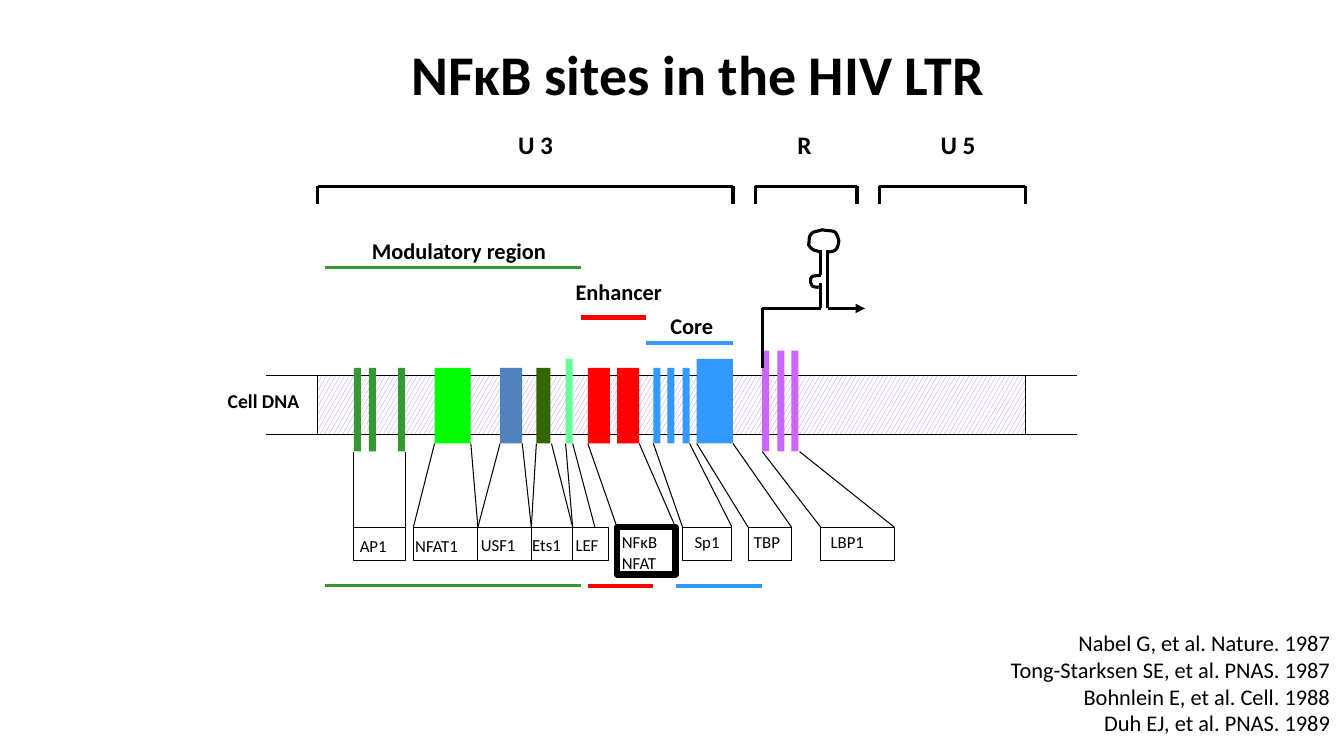
from pptx import Presentation
from pptx.dml.color import RGBColor
from pptx.enum.dml import MSO_PATTERN
from pptx.enum.shapes import MSO_CONNECTOR as Conn, MSO_SHAPE as Shape
from pptx.enum.text import MSO_ANCHOR as Anchor, MSO_AUTO_SIZE as Auto, PP_ALIGN as Align
from pptx.oxml.ns import qn
from pptx.util import Pt
from lxml.etree import SubElement

PX = 9144
BLACK = RGBColor(0, 0, 0)
WHITE = RGBColor(255, 255, 255)
RED = RGBColor(255, 0, 0)
BLUE = RGBColor(0x33, 0x99, 0xFF)
GREEN = RGBColor(0x33, 0x99, 0x33)
LIME = RGBColor(0, 255, 0)
STEEL = RGBColor(0x4F, 0x81, 0xBD)
OLIVE = RGBColor(0x33, 0x66, 0)
MINT = RGBColor(0x66, 0xFF, 0x99)
VIOLET = RGBColor(0xCC, 0x66, 0xFF)
HATCH = RGBColor(0x99, 0x66, 0xFF)

TITLE = "NFκB sites in the HIV LTR"
PAPERS = [
    "Nabel G, et al. Nature. 1987",
    "Tong-Starksen SE, et al. PNAS. 1987",
    "Bohnlein E, et al. Cell. 1988",
    "Duh EJ, et al. PNAS. 1989",
]
# text, left, top, width, height, size
HEADS = [
    ("U 3", 504, 123, 55, 40, 18),
    ("R", 781, 123, 34, 40, 18),
    ("U 5", 923, 123, 55, 40, 18),
    ("Modulatory region", 359, 230, 195, 37, 16),
    ("Enhancer", 561, 271, 107, 37, 16),
    ("Core", 655, 305, 63, 37, 16),
    ("Cell DNA", 216, 381, 92, 34, 14),
]
DNA = (315, 373, 702, 58)
SPANS = [(315, 727), (749, 850), (872, 1017)]
BARS = [
    (VIOLET, 7, 348, 448, [756, 771, 785]),
    (BLUE, 36, 356, 440, [691]),
    (BLUE, 7, 365, 440, [648, 662, 677]),
    (RED, 22, 365, 440, [583, 612]),
    (GREEN, 7, 365, 448, [351, 366, 395]),
    (LIME, 36, 365, 440, [431]),
    (STEEL, 22, 365, 440, [496]),
    (OLIVE, 14, 365, 440, [532]),
    (MINT, 7, 356, 440, [561]),
]
RULES = [
    (322, 576, 265, GREEN, 2.25),
    (576, 641, 315, RED, 3),
    (641, 727, 340, BLUE, 3),
    (322, 576, 581, GREEN, 2.25),
    (583, 648, 581, RED, 3),
    (670, 756, 581, BLUE, 3),
]
STEMS = [
    (756, 365, 756, 306),
    (756, 306, 814, 306),
    (814, 306, 814, 281),
    (821, 306, 821, 248),
    (814, 273, 814, 248),
]
BULGE = [(814, 273), (811, 274), (803, 272), (804, 279), (804, 281),
         (805, 283), (806, 284), (808, 285), (812, 285), (812, 285)]
LOOP = [(814, 250), (808, 248), (806, 249), (802, 243), (803, 239),
        (802, 235), (804, 233), (806, 229), (811, 230), (815, 228),
        (828, 230), (829, 227), (832, 239), (831, 247), (829, 250), (821, 250)]
SITES = [
    ("AP1", 347, 527, 47, 351, 402),
    ("NFAT1", 402, 527, 93, 410, 474),
    ("USF1", 467, 526, 55, 474, 527),
    ("Ets1", 518, 526, 49, 527, 568),
    ("LEF", 561, 526, 43, 568, 604),
    ("NFκB\nNFAT", 607, 523, 64, 612, 670),
    ("Sp1", 679, 523, 45, 677, 726),
    ("TBP", 738, 523, 46, 742, 785),
    ("LBP1", 814, 523, 54, 814, 887),
]
LEGS = [
    (448, [(351, 351), (402, 402), (756, 814), (793, 887)]),
    (440, [(431, 410), (467, 474), (496, 474), (518, 527), (532, 527),
           (547, 568), (561, 568), (568, 590), (583, 612), (634, 670),
           (648, 677), (684, 726), (691, 742), (727, 785)]),
]
BOXTOP = 523


def emu(*nums):
    """Turn px into EMU."""
    return [n * PX for n in nums]


def line(host, x1, y1, x2, y2, color=BLACK, width=0.75, arrow=False):
    """Draw a straight line."""
    rule = host.add_connector(Conn.STRAIGHT, *emu(x1, y1, x2, y2))
    rule.line.color.rgb = color
    rule.line.width = Pt(width)
    if arrow:
        SubElement(rule.line._get_or_add_ln(), qn("a:tailEnd"), type="triangle")
    SubElement(rule._element.spPr, qn("a:effectLst"))


def rect(host, x, y, w, h, fill=None, width=0):
    """Draw a rectangle with an optional fill and outline."""
    box = host.add_shape(Shape.RECTANGLE, *emu(x, y, w, h))
    box.shadow.inherit = False
    if fill is None:
        box.fill.background()
    else:
        box.fill.solid()
        box.fill.fore_color.rgb = fill
    if width:
        box.line.color.rgb = BLACK
        box.line.width = Pt(width)
    else:
        box.line.fill.background()
    return box


def curve(host, nodes, steps=8):
    """Draw an open outline through chained cubic curves."""
    dots = []
    for i in range(0, len(nodes) - 1, 3):
        for k in range(1, steps + 1):
            t = k / steps
            mix = ((1 - t) ** 3, 3 * t * (1 - t) ** 2, 3 * t * t * (1 - t), t ** 3)
            dots.append([round(PX * sum(m * p[a] for m, p in zip(mix, nodes[i:i + 4])))
                         for a in (0, 1)])
    pen = host.build_freeform(*emu(*nodes[0]), scale=1.0)
    pen.add_line_segments(dots, close=False)
    form = pen.convert_to_shape()
    form.shadow.inherit = False
    form.fill.background()
    form.line.color.rgb = BLACK
    form.line.width = Pt(2.25)


def write(box, text, size=12, bold=False, align=Align.LEFT, wrap=False):
    """Put formatted text in a box, one paragraph a line."""
    frame = box.text_frame
    frame.text = text
    frame.word_wrap = wrap
    frame.auto_size = Auto.SHAPE_TO_FIT_TEXT
    frame.vertical_anchor = Anchor.TOP
    for para in frame.paragraphs:
        para.alignment = align
        font = para.runs[0].font
        font.name, font.size, font.bold = "Calibri", Pt(size), bold
        font.color.rgb = BLACK


def main():
    """Build the slide and save it."""
    deck = Presentation()
    deck.slide_width, deck.slide_height = emu(1333, 750)
    slide = deck.slides.add_slide(deck.slide_layouts[5])
    host = slide.shapes

    title = host.title
    title.left, title.top, title.width, title.height = emu(395, 34, 594, 77)
    write(title, TITLE, size=40, bold=True, align=Align.CENTER)

    x, y, w, h = DNA
    strand = rect(host, x, y, w, h, WHITE, 0.75)
    strand.fill.patterned()
    strand.fill.pattern = MSO_PATTERN.LARGE_CONFETTI
    strand.fill.fore_color.rgb = HATCH
    strand.fill.back_color.rgb = WHITE
    for left in (x - 51, x + w):
        for level in (y, y + h):
            line(host, left, level, left + 51, level)

    group = host.add_group_shape().shapes
    for a, b in SPANS:
        line(group, a, 185, b, 185, width=2.25)
        for end in (a, b):
            line(group, end, 185, end, 202, width=2.25)

    for text, x, y, w, h, size in HEADS:
        write(host.add_textbox(*emu(x, y, w, h)), text, size=size, bold=True)

    for color, w, top, foot, lefts in BARS:
        for left in lefts:
            rect(host, left, top, w, foot - top, color)

    group = host.add_group_shape().shapes
    for stem in STEMS:
        line(group, *stem, width=2.25)
    curve(group, BULGE)
    curve(group, LOOP)
    line(group, 821, 306, 858, 306, width=2.25, arrow=True)

    for a, b, y, color, width in RULES:
        line(host, a, y, b, y, color, width)

    for top, pairs in LEGS:
        for a, b in pairs:
            line(host, a, top, b, BOXTOP)

    for text, x, y, w, left, right in SITES:
        twin = "\n" in text
        rect(host, left, BOXTOP, right - left, 47 if twin else 33,
             width=4.5 if twin else 0.75)
        label = host.add_textbox(*emu(x, y, w, 50 if twin else 30))
        write(label, text, wrap=twin)

    papers = host.add_textbox(*emu(944, 619, 385, 118))
    write(papers, "\n".join(PAPERS), size=16, align=Align.RIGHT, wrap=True)
    deck.save("out.pptx")


if __name__ == "__main__":
    main()
